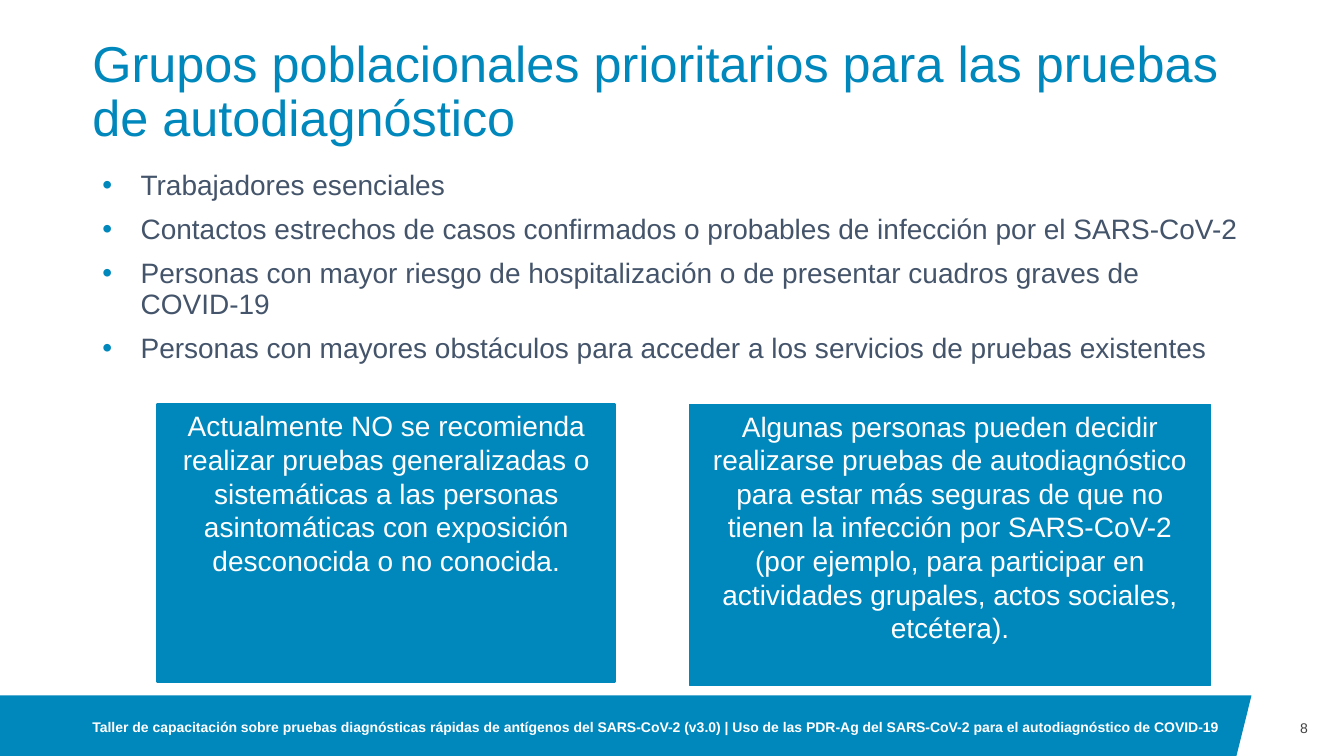
"""Build the slide on priority population groups for self-testing."""
from dataclasses import dataclass

from lxml.etree import SubElement
from pptx import Presentation
from pptx.dml.color import RGBColor as RGB
from pptx.enum.shapes import MSO_SHAPE as Shape
from pptx.enum.text import MSO_ANCHOR as Anchor, PP_ALIGN as Align
from pptx.oxml.ns import qn
from pptx.shapes.autoshape import Shape as AutoShape
from pptx.shapes.shapetree import SlideShapes
from pptx.util import Emu, Inches, Pt

COLS, ROWS = 160, 90
CELL = Inches(1 / 12)


@dataclass(frozen=True)
class Theme:
    font: str = "Arial"
    blue: RGB = RGB(0x00, 0x87, 0xBC)
    slate: RGB = RGB(0x44, 0x54, 0x6A)
    grey: RGB = RGB(0x42, 0x42, 0x42)
    white: RGB = RGB(0xFF, 0xFF, 0xFF)
    title: int = 36
    body: int = 20
    small: int = 10


T = Theme()


@dataclass(frozen=True)
class Area:
    col: float
    row: float
    cols: float
    rows: float

    def emu(self) -> tuple[Emu, ...]:
        return tuple(grid(n) for n in (self.col, self.row, self.cols, self.rows))


@dataclass(frozen=True)
class Block:
    area: Area
    lines: tuple[str, ...]
    size: int
    color: RGB
    bold: bool = False
    align: Align = Align.LEFT
    anchor: Anchor = Anchor.TOP
    spacing: float = 1.0
    bullets: bool = False
    padded: bool = False
    border: float = 0


def grid(n: float) -> Emu:
    return Emu(round(n * CELL))


def add_bullet(p) -> None:
    p.space_before = Pt(10)
    pPr = p._p.get_or_add_pPr()
    pPr.set("marL", str(Inches(0.38)))
    pPr.set("indent", str(-Inches(0.38)))
    clr = SubElement(pPr, qn("a:buClr"))
    SubElement(clr, qn("a:srgbClr"), val=str(T.blue))
    SubElement(pPr, qn("a:buFont"), typeface=T.font)
    SubElement(pPr, qn("a:buChar"), char="•")


def paint(sp: AutoShape, border: float = 0) -> None:
    sp.shadow.inherit = False
    sp.fill.solid()
    sp.fill.fore_color.rgb = T.blue
    if border:
        sp.line.color.rgb = T.blue
        sp.line.width = Pt(border)
    else:
        sp.line.fill.background()


def draw_block(shapes: SlideShapes, b: Block) -> None:
    if b.border:
        sp = shapes.add_shape(Shape.RECTANGLE, *b.area.emu())
        paint(sp, b.border)
    else:
        sp = shapes.add_textbox(*b.area.emu())
    tf = sp.text_frame
    tf.word_wrap = True
    tf.vertical_anchor = b.anchor
    tf.margin_left = tf.margin_right = Inches(0.1 if b.padded else 0)
    tf.margin_top = tf.margin_bottom = Inches(0.05 if b.padded else 0)
    tf.text = "\n".join(b.lines)
    for p in tf.paragraphs:
        p.alignment = b.align
        p.line_spacing = b.spacing
        if b.bullets:
            add_bullet(p)
        for r in p.runs:
            r.font.name = T.font
            r.font.size = Pt(b.size)
            r.font.bold = b.bold
            r.font.color.rgb = b.color


def draw_footer_band(shapes: SlideShapes) -> None:
    top = 82.8
    corners = [(149, top), (147.2, ROWS), (0, ROWS)]
    band = shapes.build_freeform(0, grid(top))
    band.add_line_segments([(grid(x), grid(y)) for x, y in corners], close=True)
    paint(band.convert_to_shape())


def callout(area: Area, text: str, border: float) -> Block:
    return Block(area, (text,), T.body, T.white, align=Align.CENTER,
                 padded=True, border=border)


BLOCKS = (
    Block(Area(11, 5.2, 138, 12.4),
          ("Grupos poblacionales prioritarios para las pruebas de autodiagnóstico",),
          T.title, T.blue, anchor=Anchor.BOTTOM, spacing=0.9),
    Block(Area(11, 19.8, 138, 27),
          ("Trabajadores esenciales",
           "Contactos estrechos de casos confirmados o probables de infección por el SARS-CoV-2",
           "Personas con mayor riesgo de hospitalización o de presentar cuadros graves de COVID-19",
           "Personas con mayores obstáculos para acceder a los servicios de pruebas existentes"),
          T.body, T.slate, spacing=0.9, bullets=True, padded=True),
    callout(Area(18.8, 48.1, 54.4, 33.1),
            "Actualmente NO se recomienda realizar pruebas generalizadas o sistemáticas "
            "a las personas asintomáticas con exposición desconocida o no conocida.", 2),
    callout(Area(82.1, 48.1, 62, 33.5),
            "Algunas personas pueden decidir realizarse pruebas de autodiagnóstico para "
            "estar más seguras de que no tienen la infección por SARS-CoV-2 (por ejemplo, "
            "para participar en actividades grupales, actos sociales, etcétera).", 0.75),
    Block(Area(11, 83.2, 136.3, 6.6),
          ("Taller de capacitación sobre pruebas diagnósticas rápidas de antígenos del "
           "SARS-CoV-2 (v3.0) | Uso de las PDR-Ag del SARS-CoV-2 para el autodiagnóstico "
           "de COVID-19",),
          T.small, T.white, bold=True, anchor=Anchor.MIDDLE),
    Block(Area(149, 82.8, 6.7, 7.6), ("8",), T.small, T.grey,
          align=Align.RIGHT, anchor=Anchor.MIDDLE),
)


def main() -> None:
    prs = Presentation()
    prs.slide_width, prs.slide_height = grid(COLS), grid(ROWS)
    s = prs.slides.add_slide(prs.slide_layouts[6])
    draw_footer_band(s.shapes)
    for block in BLOCKS:
        draw_block(s.shapes, block)
    prs.save("out.pptx")


if __name__ == "__main__":
    main()
